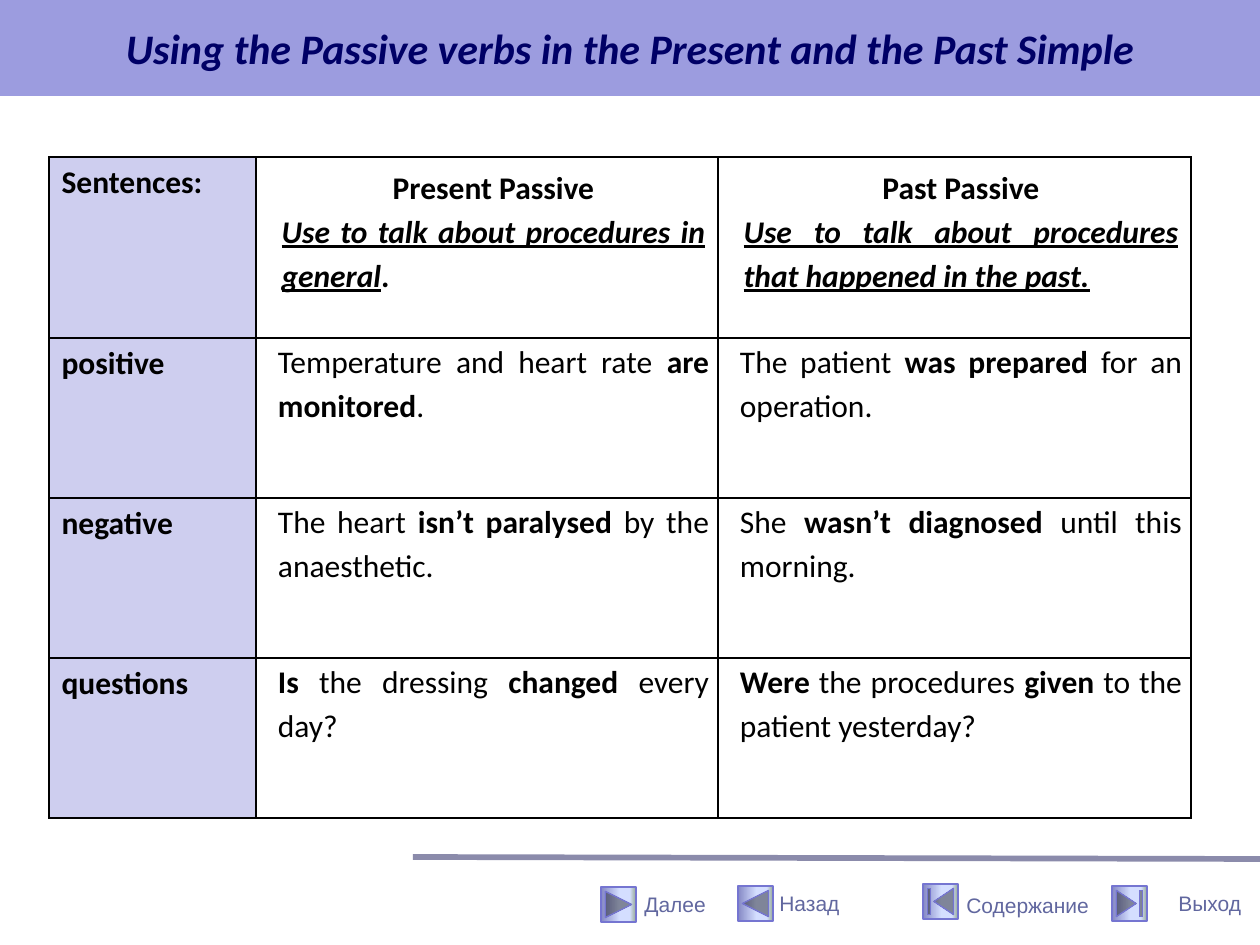
from lxml import etree
from pptx import Presentation
from pptx.dml.color import RGBColor
from pptx.enum.shapes import MSO_CONNECTOR, MSO_SHAPE
from pptx.enum.text import MSO_ANCHOR, PP_ALIGN
from pptx.oxml.ns import qn
from pptx.util import Pt

NAVY = RGBColor(0x00, 0x00, 0x66)
LAVENDER = RGBColor(0x9C, 0x9C, 0xDF)
PALE = RGBColor(0xCE, 0xCE, 0xEF)
BLACK = RGBColor(0x00, 0x00, 0x00)
WHITE = RGBColor(0xFF, 0xFF, 0xFF)
RULE = RGBColor(0x5A, 0x5A, 0x88)
LABEL = RGBColor(0x61, 0x67, 0x9F)
BUTTON_EDGE = RGBColor(0x75, 0x75, 0xD1)
BUTTON_STOPS = [(0, "8488C4"), (53, "D4DEFF"), (83, "D4DEFF"), (100, "96AB94")]
CENTER, JUSTIFY = PP_ALIGN.CENTER, PP_ALIGN.JUSTIFY
MIDDLE, TOP = MSO_ANCHOR.MIDDLE, MSO_ANCHOR.TOP
NEXT = MSO_SHAPE.ACTION_BUTTON_FORWARD_OR_NEXT
BACK = MSO_SHAPE.ACTION_BUTTON_BACK_OR_PREVIOUS
BEGINNING = MSO_SHAPE.ACTION_BUTTON_BEGINNING
END = MSO_SHAPE.ACTION_BUTTON_END


def px(*values):
    """Turn pixels (126 to the inch) into a list of EMU lengths."""
    return [round(v * 914400 / 126) for v in values]


def style(r, font, size, color, bold=False, italic=False):
    r.font.name, r.font.size, r.font.color.rgb = font, Pt(size), color
    r.font.bold, r.font.italic = bold, italic


prs = Presentation()
prs.slide_width, prs.slide_height = px(1260, 945)
s = prs.slides.add_slide(prs.slide_layouts[5])

# Title band
title = s.shapes.title
title.left, title.top, title.width, title.height = px(0, 0, 1260, 96)
title.fill.solid()
title.fill.fore_color.rgb = LAVENDER
tf = title.text_frame
tf.text = "Using the Passive verbs in the Present and the Past Simple"
tf.vertical_anchor = MIDDLE
tf.paragraphs[0].alignment = CENTER
style(tf.paragraphs[0].runs[0], "Calibri", 24, NAVY, True, True)

# Table: a cell is a list of paragraphs, a paragraph a list of (text, marks)
# with marks b = bold, i = italic, u = underlined
rows = [
    [[[("Sentences:", "b")]],
     [[("Present Passive", "b")],
      [("Use to talk about procedures in general", "biu"), (".", "b")]],
     [[("Past Passive", "b")],
      [("Use to talk about procedures that happened in the past.", "biu")]]],
    [[[("positive", "b")]],
     [[("Temperature and heart rate ", ""), ("are monitored", "b"), (".", "")]],
     [[("The patient ", ""), ("was prepared", "b"), (" for an operation.", "")]]],
    [[[("negative", "b")]],
     [[("The heart ", ""), ("isn’t paralysed", "b"), (" by the anaesthetic.", "")]],
     [[("She ", ""), ("wasn’t diagnosed", "b"), (" until this morning.", "")]]],
    [[[("questions", "b")]],
     [[("Is", "b"), (" the dressing ", ""), ("changed", "b"), (" every day?", "")]],
     [[("Were", "b"), (" the procedures ", ""), ("given", "b"),
       (" to the patient yesterday?", "")]]],
]
table = s.shapes.add_table(4, 3, *px(49, 157, 1142, 661)).table
table.first_row = table.horz_banding = False
for col, width in zip(table.columns, px(207, 462, 473)):
    col.width = width
for row, height in zip(table.rows, px(181, 160, 160, 160)):
    row.height = height

for i, row in enumerate(rows):
    for j, paragraphs in enumerate(row):
        cell = table.cell(i, j)
        if i and j:
            cell.margin_left, cell.margin_right = px(9, 9)
            cell.margin_top = cell.margin_bottom = 0
        tf = cell.text_frame
        for k, parts in enumerate(paragraphs):
            p = tf.add_paragraph() if k else tf.paragraphs[0]
            if j:
                p.alignment = CENTER if i == 0 and k == 0 else JUSTIFY
                p.line_spacing = 1.15
                p._p.get_or_add_pPr().set("marL", str(px(13)[0]))
            for text, marks in parts:
                r = p.add_run()
                r.text = text
                style(r, "Calibri", 18, BLACK, "b" in marks, "i" in marks)
                r.font.underline = "u" in marks
        tcPr = cell._tc.get_or_add_tcPr()
        for side in ("a:lnL", "a:lnR", "a:lnT", "a:lnB"):
            ln = etree.SubElement(tcPr, qn(side), w=str(Pt(1)))
            fill = etree.SubElement(ln, qn("a:solidFill"))
            etree.SubElement(fill, qn("a:srgbClr"), val=str(BLACK))
        if j and i % 2 == 0:
            cell.fill.background()
        else:
            cell.fill.solid()
            cell.fill.fore_color.rgb = WHITE if j else PALE

# Footer rule
rule = s.shapes.add_connector(MSO_CONNECTOR.STRAIGHT, *px(413, 857, 1260, 859))
rule.line.color.rgb = RULE
rule.line.width = Pt(3.25)
color = rule.line._ln.find(".//" + qn("a:srgbClr"))
etree.SubElement(color, qn("a:alpha"), val="70000")
etree.SubElement(rule._element.spPr, qn("a:effectLst"))

# Navigation: button kind, its left and top, label, label box, wrap, anchor
navigation = [
    (NEXT, 601, 887, "Далее", (632, 885, 87, 38), False, TOP),
    (BACK, 738, 886, "Назад", (767, 884, 86, 38), False, TOP),
    (BEGINNING, 923, 884, "Содержание", (954, 886, 149, 38), True, TOP),
    (END, 1112, 886, "Выход", (1166, 872, 94, 63), False, MIDDLE),
]
for kind, left, top, label, box, wrap, anchor in navigation:
    button = s.shapes.add_shape(kind, *px(left, top, 35, 35))
    button.shadow.inherit = False
    button.line.color.rgb = BUTTON_EDGE
    button.line.width = Pt(0.75)
    button.fill.gradient()
    button.fill.gradient_angle = 0
    stops = button._element.spPr.find(".//" + qn("a:gsLst"))
    for gs in list(stops):
        stops.remove(gs)
    for percent, rgb in BUTTON_STOPS:
        gs = etree.SubElement(stops, qn("a:gs"), pos=str(percent * 1000))
        etree.SubElement(gs, qn("a:srgbClr"), val=rgb)

    tf = s.shapes.add_textbox(*px(*box)).text_frame
    tf.text = label
    tf.word_wrap = wrap
    tf.vertical_anchor = anchor
    style(tf.paragraphs[0].runs[0], "Arial", 12, LABEL)

prs.save("out.pptx")
